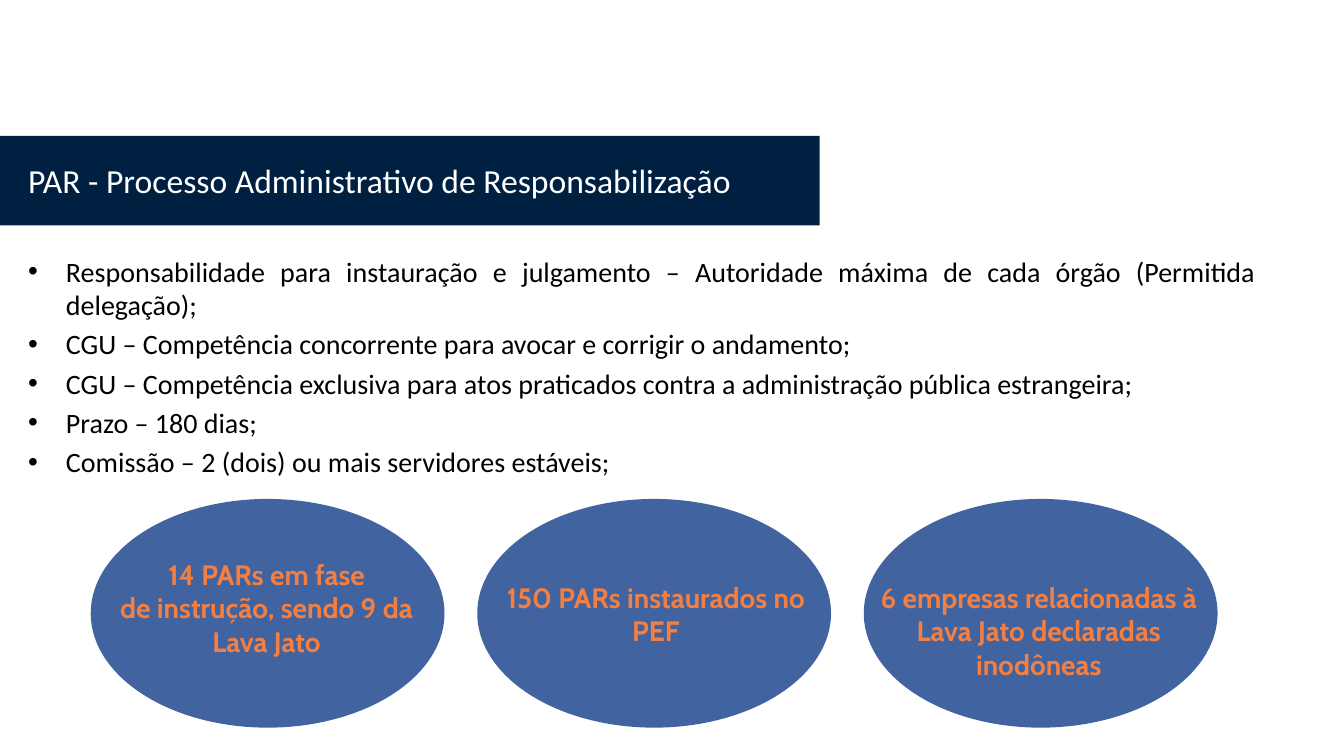
import pptx
import pptx.util
import pptx.dml.color
import pptx.enum.shapes
import pptx.enum.text
import pptx.oxml
import pptx.oxml.ns
import lxml.etree

Pt = pptx.util.Pt
Color = pptx.dml.color.RGBColor.from_string
Shape = pptx.enum.shapes.MSO_SHAPE
Align = pptx.enum.text.PP_ALIGN
qn = pptx.oxml.ns.qn

THEME = {
    "banner": "002042",
    "oval": "2F5597",
    "oval_alpha": "91000",
    "title": {"name": "Calibri", "size": Pt(24), "color": "FFFFFF"},
    "body": {"name": "Calibri", "size": Pt(20), "color": "000000"},
    "figure": {"name": "Cabin", "size": Pt(20), "bold": True, "color": "F47F40"},
}

deck = pptx.Presentation()
deck.slide_width, deck.slide_height = Pt(960), Pt(540)
slide = deck.slides.add_slide(deck.slide_layouts[6])


def add_filled_shape(kind, bounds, color):
    shape = slide.shapes.add_shape(kind, *map(Pt, bounds))
    shape.shadow.inherit = False
    shape.fill.solid()
    shape.fill.fore_color.rgb = Color(color)
    shape.line.fill.background()
    return shape


def add_text(bounds, lines, style, align, bulleted=False):
    box = slide.shapes.add_textbox(*map(Pt, bounds))
    box.text_frame.word_wrap = True
    for index, line in enumerate(lines):
        para = box.text_frame.paragraphs[0] if index == 0 else box.text_frame.add_paragraph()
        para.alignment = align
        if bulleted:
            properties = para._p.get_or_add_pPr()
            properties.set("marL", str(Pt(27)))
            properties.set("indent", str(-Pt(27)))
            if index > 0:
                para.space_before = Pt(4)
            lxml.etree.SubElement(properties, qn("a:buFont")).set("typeface", "Arial")
            lxml.etree.SubElement(properties, qn("a:buChar")).set("char", "•")
        span = para.add_run()
        span.text = line
        for name, value in style.items():
            if name == "color":
                span.font.color.rgb = Color(value)
            else:
                setattr(span.font, name, value)


add_filled_shape(Shape.RECTANGLE, (0, 97, 585.5, 64), THEME["banner"])
add_text((13, 111, 572, 58), ["PAR - Processo Administrativo de Responsabilização"],
         THEME["title"], Align.LEFT)

rules = [
    "Responsabilidade para instauração e julgamento – Autoridade máxima de cada órgão (Permitida delegação);",
    "CGU – Competência concorrente para avocar e corrigir o andamento;",
    "CGU – Competência exclusiva para atos praticados contra a administração pública estrangeira;",
    "Prazo – 180 dias;",
    "Comissão – 2 (dois) ou mais servidores estáveis;",
]
add_text((13, 178, 891, 295), rules, THEME["body"], Align.JUSTIFY, bulleted=True)

figures = [
    ((41, 394.5, 299, 101.5), ["14 PARs em fase", "de instrução, sendo 9 da", "Lava Jato"]),
    ((319, 411, 299, 78), ["150 PARs instaurados no", "PEF"]),
    ((615, 411, 254, 101.5), ["6 empresas relacionadas à Lava Jato declaradas", "inodôneas"]),
]
for column, (bounds, lines) in enumerate(figures):
    oval = add_filled_shape(Shape.OVAL, (64.8 + column * 276.1, 356.4, 252.7, 163.4), THEME["oval"])
    tint = oval._element.spPr.find(qn("a:solidFill")).find(qn("a:srgbClr"))
    lxml.etree.SubElement(tint, qn("a:alpha")).set("val", THEME["oval_alpha"])
    add_text(bounds, lines, THEME["figure"], Align.CENTER)

deck.save("out.pptx")
